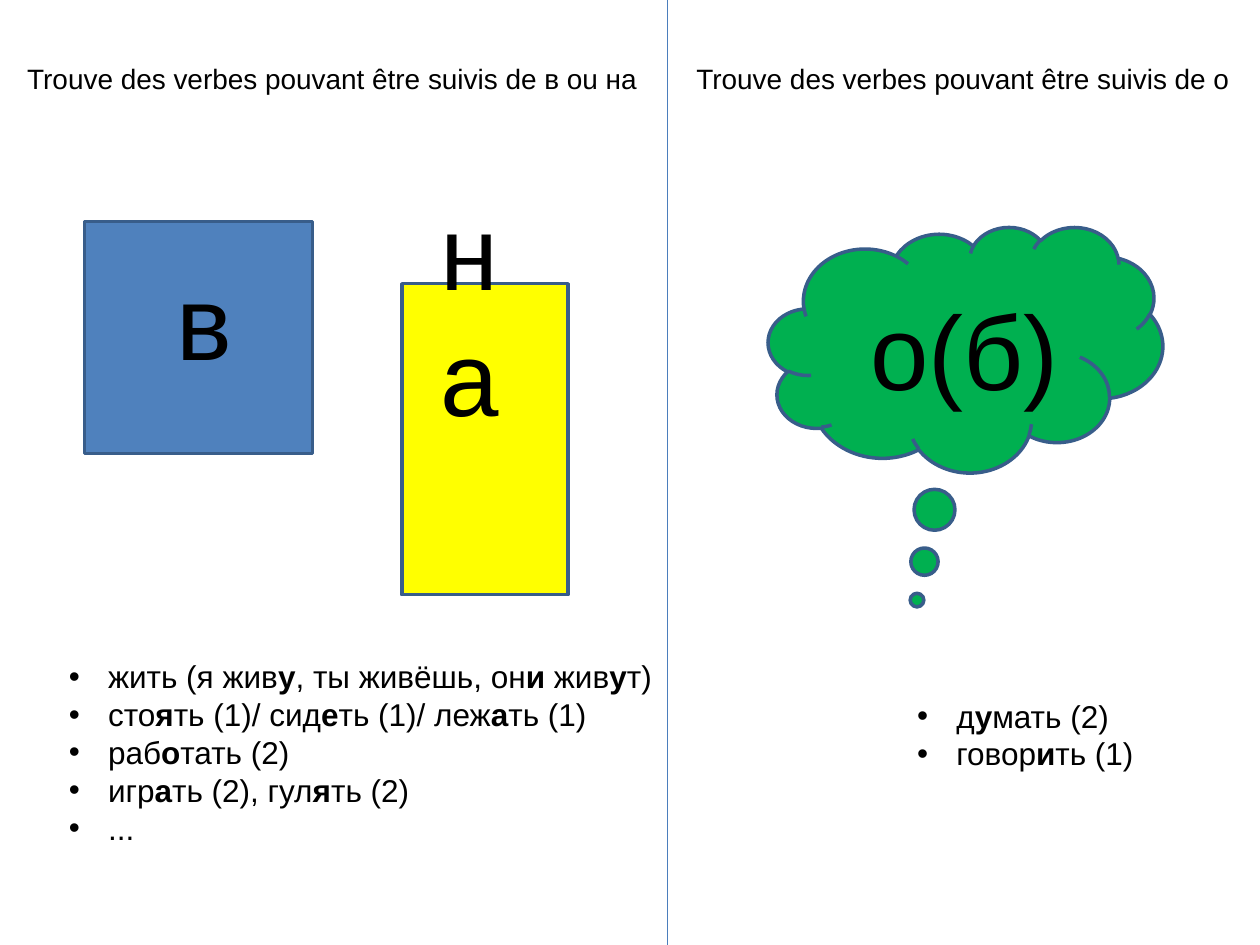
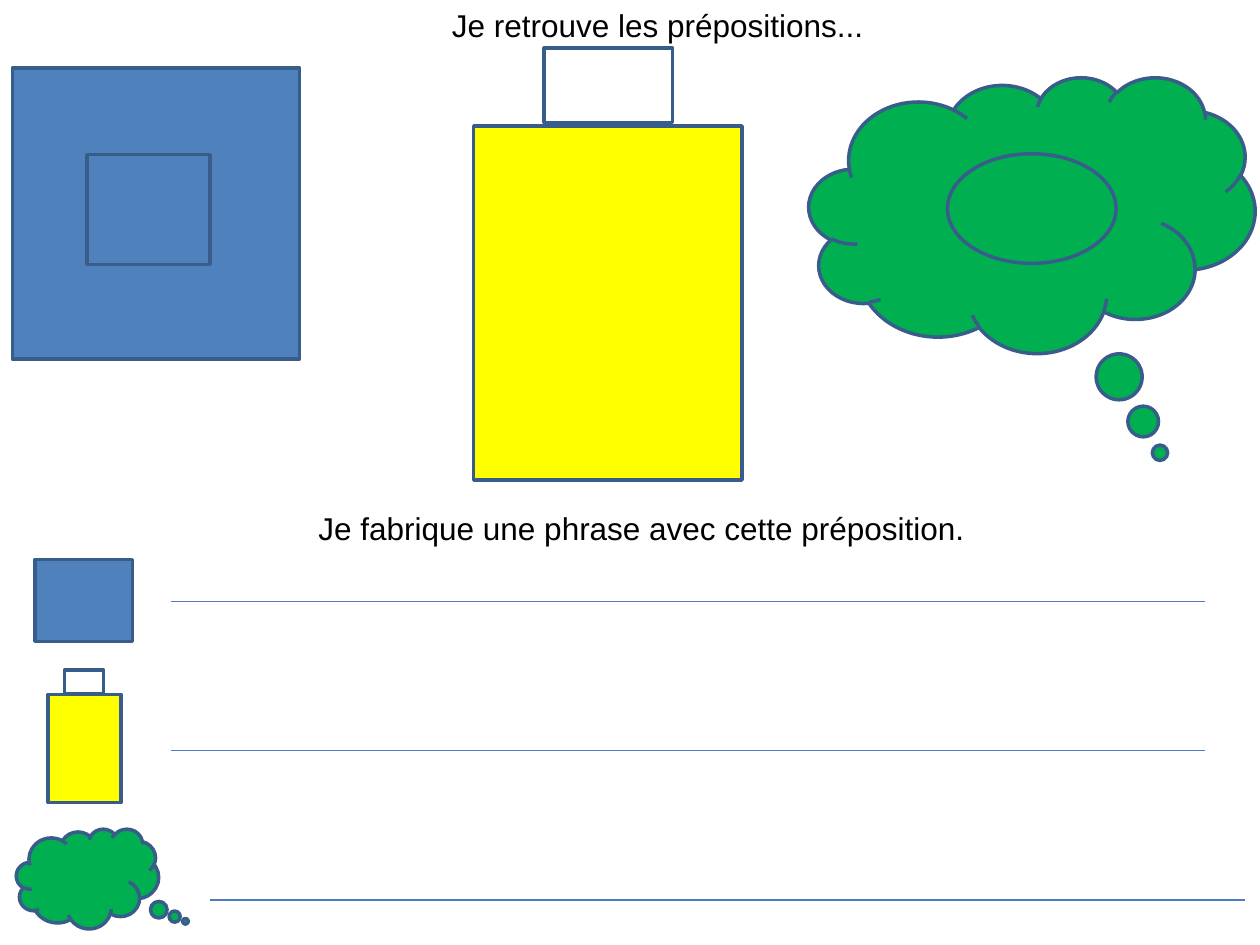
from lxml import etree
from pptx import Presentation
from pptx.dml.color import RGBColor
from pptx.enum.shapes import MSO_CONNECTOR, MSO_SHAPE
from pptx.enum.text import MSO_AUTO_SIZE
from pptx.oxml.ns import qn
from pptx.util import Cm, Pt

RECT, OVAL, CLOUD = MSO_SHAPE.RECTANGLE, MSO_SHAPE.OVAL, MSO_SHAPE.CLOUD_CALLOUT
STRAIGHT = MSO_CONNECTOR.STRAIGHT
FIT = MSO_AUTO_SIZE.SHAPE_TO_FIT_TEXT
COLORS = {
    "v": "4F81BD",       # blue box: inside
    "na": "FFFF00",      # yellow box: on top
    "o": "00B050",       # green thought: about
    "lid": "FFFFFF",
    "outline": "385D8A",
    "rule": "4B7EBC",
    "text": "000000",
}
FONT = "Arial"
W, H = 25.4, 19.05
SPLIT = 13.46            # divider between the two halves of slide 1
BULLET_INDENT = 0.79

PLACE_VERBS = [
    "жить (я жив*у*, ты живёшь, он*и* жив*у*т)",
    "сто*я*ть (1)/ сид*е*ть (1)/ леж*а*ть (1)",
    "раб*о*тать (2)",
    "игр*а*ть (2), гул*я*ть (2)",
    "...",
]
TOPIC_VERBS = ["д*у*мать (2)", "говор*и*ть (1)"]


def rgb(name):
    return RGBColor.from_string(COLORS[name])


def place(box, x, y, w, h):
    """Turn an area measured from the box corner into slide lengths."""
    return Cm(box[0] + x), Cm(box[1] + y), Cm(w), Cm(h)


def add_figure(s, box, area, kind, fill=None, tail=None):
    sp = s.shapes.add_shape(kind, *place(box, *area))
    sp.shadow.inherit = False
    if fill:
        sp.fill.solid()
        sp.fill.fore_color.rgb = rgb(fill)
    else:
        sp.fill.background()
    sp.line.color.rgb = rgb("outline")
    sp.line.width = Pt(2)
    for i, value in enumerate(tail or ()):
        sp.adjustments[i] = value


def add_rule(s, box, x1, y1, x2, y2):
    x, y = box[:2]
    line = s.shapes.add_connector(STRAIGHT, Cm(x + x1), Cm(y + y1), Cm(x + x2), Cm(y + y2))
    line.line.color.rgb = rgb("rule")
    line.line.width = Pt(0.75)
    etree.SubElement(line._element.spPr, qn("a:effectLst"))


def add_bullet(p):
    pPr = p._p.get_or_add_pPr()
    pPr.set("marL", str(Cm(BULLET_INDENT)))
    pPr.set("indent", str(-Cm(BULLET_INDENT)))
    etree.SubElement(pPr, qn("a:buFont"), typeface=FONT)
    etree.SubElement(pPr, qn("a:buChar"), char="•")


def add_text(s, box, area, lines, size, wrap=False, bullets=False):
    """Write one paragraph per line; letters between asterisks are bold."""
    tf = s.shapes.add_textbox(*place(box, *area)).text_frame
    tf.word_wrap = wrap
    tf.auto_size = FIT
    for i, line in enumerate(lines):
        p = tf.add_paragraph() if i else tf.paragraphs[0]
        if bullets:
            add_bullet(p)
        for j, part in enumerate(line.split("*")):
            r = p.add_run()
            r.text = part
            r.font.name = FONT
            r.font.size = Pt(size)
            r.font.bold = j % 2 == 1
            r.font.color.rgb = rgb("text")


# Slide 1: verbs for each preposition
def place_panel(s, box):
    add_text(s, box, (0.3, 1.12, 13.18, 0.94),
             ["Trouve des verbes pouvant être suivis de в ou на"], 16, wrap=True)
    add_text(s, box, (1.14, 13.13, 12.4, 4.11), PLACE_VERBS, 18, bullets=True)
    add_figure(s, box, (1.7, 4.47, 4.6, 4.67), RECT, "v")
    add_text(s, box, (3.3, 5.03, 1.27, 2.31), ["в"], 60)
    add_figure(s, box, (8.1, 5.72, 3.35, 6.27), RECT, "na")
    add_text(s, box, (8.64, 3.61, 1.85, 1.73), ["на"], 60, wrap=True)


def topic_panel(s, box):
    add_text(s, box, (0.33, 1.12, 11.4, 0.94),
             ["Trouve des verbes pouvant être suivis de о"], 16)
    add_text(s, box, (4.78, 13.92, 4.93, 1.8), TOPIC_VERBS, 18, bullets=True)
    add_figure(s, box, (2.03, 4.57, 7.95, 4.95), CLOUD, "o", (-0.123, 1.021))
    add_text(s, box, (3.84, 5.64, 4.34, 2.82), ["о(б)"], 60)
    add_rule(s, box, 0, 0, 0, H)


# Slide 2: recall the prepositions, then write sentences
def recall_region(s, box):
    add_figure(s, box, (0.25, 1.37, 5.79, 5.87), RECT, "v")
    add_figure(s, box, (9.55, 2.54, 5.41, 7.14), RECT, "na")
    add_figure(s, box, (16.31, 1.55, 8.99, 5.56), CLOUD, "o", (0.287, 0.863))
    add_text(s, box, (8.86, 0, 8.89, 1.02), ["Je retrouve les prépositions..."], 18)
    # Answer spaces
    add_figure(s, box, (1.75, 3.12, 2.49, 2.21), RECT, "v")
    add_figure(s, box, (10.97, 0.97, 2.59, 1.5), RECT, "lid")
    add_figure(s, box, (19.1, 3.1, 3.4, 2.21), OVAL)


def writing_region(s, box):
    add_text(s, box, (6.17, 0, 13.67, 1.02),
             ["Je fabrique une phrase avec cette préposition."], 18)
    add_figure(s, box, (0.71, 1.15, 1.96, 1.65), RECT, "v")
    add_figure(s, box, (0.97, 3.87, 1.47, 2.18), RECT, "na")
    add_figure(s, box, (1.3, 3.38, 0.79, 0.48), RECT)
    add_figure(s, box, (0.33, 6.58, 2.87, 2.01), CLOUD, "o", (0.688, 0.427))
    # Writing lines
    for row, start in enumerate((3.45, 3.45, 4.24)):
        y = 1.99 + row * 3.01
        add_rule(s, box, start, y, start + 20.85, y)


def main():
    prs = Presentation()
    prs.slide_width, prs.slide_height = Cm(W), Cm(H)
    blank = prs.slide_layouts[6]

    s = prs.slides.add_slide(blank)
    place_panel(s, (0, 0))
    topic_panel(s, (SPLIT, 0))

    s = prs.slides.add_slide(blank)
    recall_region(s, (0, 0))
    writing_region(s, (0, 10.13))

    prs.save("out.pptx")


if __name__ == "__main__":
    main()
